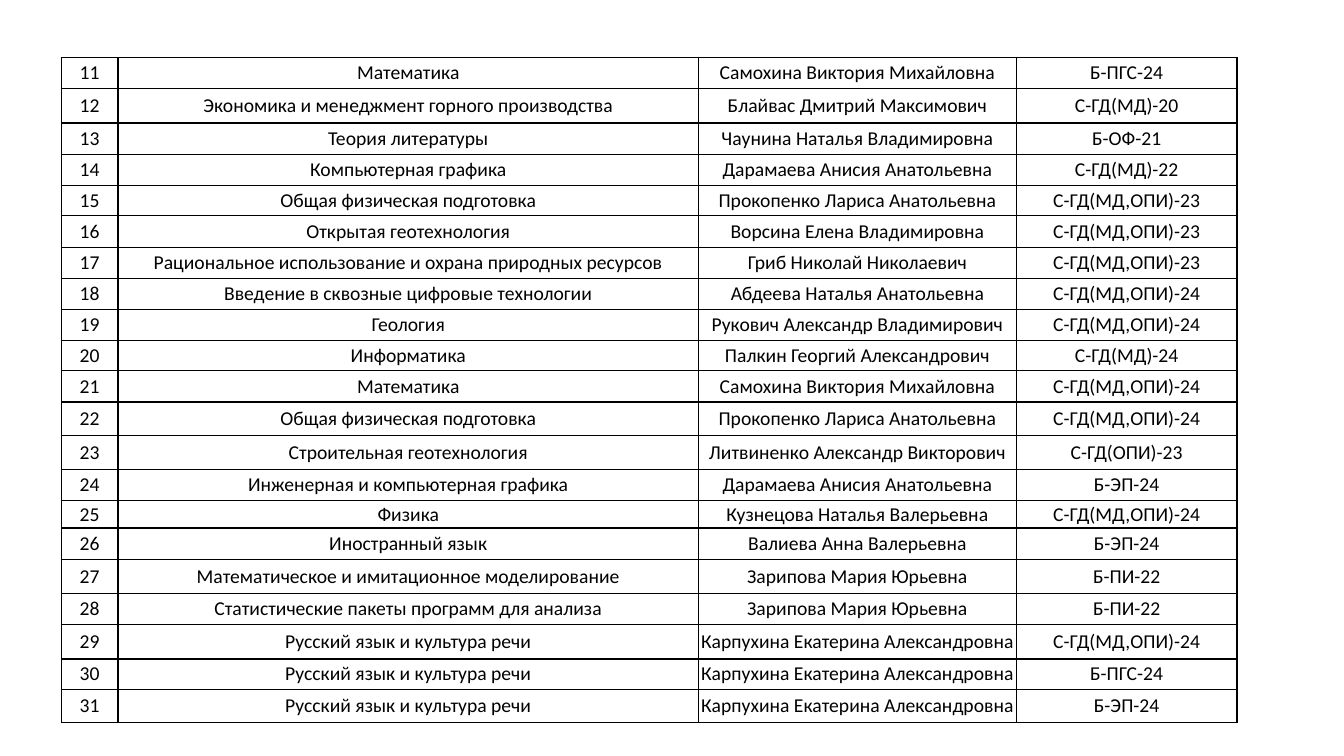
from dataclasses import dataclass

from pptx import Presentation
from pptx.dml.color import RGBColor
from pptx.enum.text import MSO_ANCHOR, PP_ALIGN
from pptx.oxml import parse_xml
from pptx.oxml.ns import nsdecls
from pptx.util import Inches, Pt


@dataclass
class Theme:
    font: str = "Calibri"
    size: int = 14
    ink: str = "000000"
    border: int = 1


theme = Theme()
FIRST_NUMBER = 11
TABLE_LEFT, TABLE_TOP = 0.61, 0.57
COLUMN_WIDTHS = [0.56, 5.76, 3.15, 2.19]

# Row height, subject, teacher, group
COURSES = [
    (0.31, "Математика", "Самохина Виктория Михайловна", "Б-ПГС-24"),
    (0.34, "Экономика и менеджмент горного производства", "Блайвас Дмитрий Максимович", "С-ГД(МД)-20"),
    (0.31, "Теория литературы", "Чаунина Наталья Владимировна", "Б-ОФ-21"),
    (0.31, "Компьютерная графика", "Дарамаева Анисия Анатольевна", "С-ГД(МД)-22"),
    (0.30, "Общая физическая подготовка", "Прокопенко Лариса Анатольевна", "С-ГД(МД,ОПИ)-23"),
    (0.32, "Открытая геотехнология", "Ворсина Елена Владимировна", "С-ГД(МД,ОПИ)-23"),
    (0.30, "Рациональное использование и охрана природных ресурсов", "Гриб Николай Николаевич", "С-ГД(МД,ОПИ)-23"),
    (0.31, "Введение в сквозные цифровые технологии", "Абдеева Наталья Анатольевна", "С-ГД(МД,ОПИ)-24"),
    (0.31, "Геология", "Рукович Александр Владимирович", "С-ГД(МД,ОПИ)-24"),
    (0.30, "Информатика", "Палкин Георгий Александрович", "С-ГД(МД)-24"),
    (0.31, "Математика", "Самохина Виктория Михайловна", "С-ГД(МД,ОПИ)-24"),
    (0.33, "Общая физическая подготовка", "Прокопенко Лариса Анатольевна", "С-ГД(МД,ОПИ)-24"),
    (0.34, "Строительная геотехнология", "Литвиненко Александр Викторович", "С-ГД(ОПИ)-23"),
    (0.31, "Инженерная и компьютерная графика", "Дарамаева Анисия Анатольевна", "Б-ЭП-24"),
    (0.27, "Физика", "Кузнецова Наталья Валерьевна", "С-ГД(МД,ОПИ)-24"),
    (0.31, "Иностранный язык", "Валиева Анна Валерьевна", "Б-ЭП-24"),
    (0.34, "Математическое и имитационное моделирование", "Зарипова Мария Юрьевна", "Б-ПИ-22"),
    (0.31, "Статистические пакеты программ для анализа", "Зарипова Мария Юрьевна", "Б-ПИ-22"),
    (0.34, "Русский язык и культура речи", "Карпухина Екатерина Александровна", "С-ГД(МД,ОПИ)-24"),
    (0.30, "Русский язык и культура речи", "Карпухина Екатерина Александровна", "Б-ПГС-24"),
    (0.33, "Русский язык и культура речи", "Карпухина Екатерина Александровна", "Б-ЭП-24"),
]


def add_borders(cell):
    properties = cell._tc.get_or_add_tcPr()
    for position, side in enumerate(("lnL", "lnR", "lnT", "lnB")):
        # Border lines have to stand before the fill
        properties.insert(position, parse_xml(
            f'<a:{side} {nsdecls("a")} w="{Pt(theme.border)}"><a:solidFill>'
            f'<a:srgbClr val="{theme.ink}"/></a:solidFill></a:{side}>'))


def fill_cell(cell, text):
    cell.fill.background()
    cell.vertical_anchor = MSO_ANCHOR.MIDDLE
    cell.margin_left = cell.margin_right = cell.margin_top = cell.margin_bottom = 0
    add_borders(cell)
    para = cell.text_frame.paragraphs[0]
    para.text = text
    para.alignment = PP_ALIGN.CENTER
    font = para.runs[0].font
    font.name = theme.font
    font.size = Pt(theme.size)
    font.color.rgb = RGBColor.from_string(theme.ink)


deck = Presentation()
deck.slide_width, deck.slide_height = Inches(13.33), Inches(7.5)
page = deck.slides.add_slide(deck.slide_layouts[6])

table = page.shapes.add_table(
    len(COURSES), len(COLUMN_WIDTHS), Inches(TABLE_LEFT), Inches(TABLE_TOP),
    Inches(sum(COLUMN_WIDTHS)), Inches(sum(course[0] for course in COURSES))).table
table.first_row = table.horz_banding = False

for column, width in zip(table.columns, COLUMN_WIDTHS):
    column.width = Inches(width)

for number, (row, (height, *details)) in enumerate(zip(table.rows, COURSES), FIRST_NUMBER):
    row.height = Inches(height)
    for cell, text in zip(row.cells, [str(number), *details]):
        fill_cell(cell, text)

deck.save("out.pptx")
